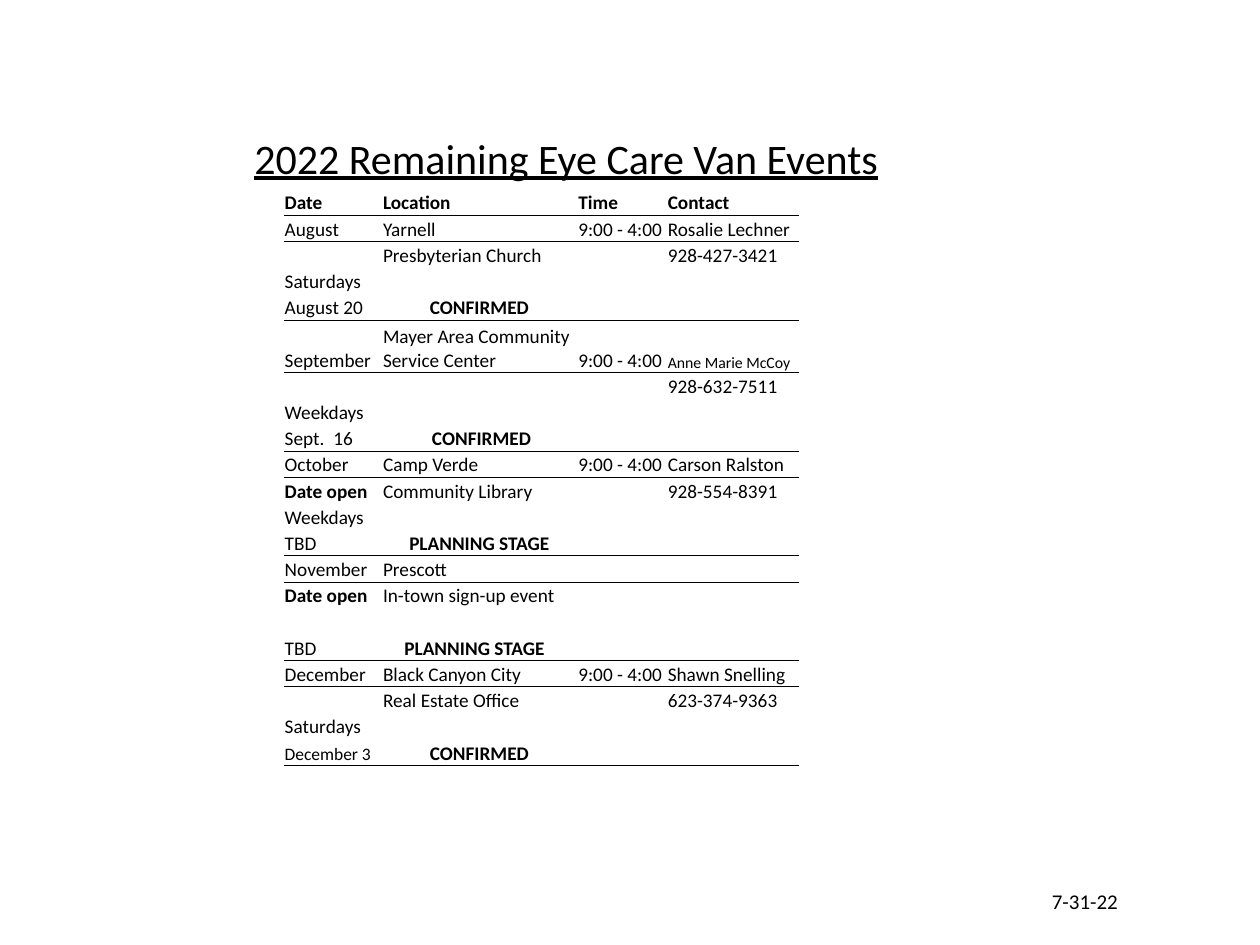
import pptx
import pptx.util
import pptx.dml.color
import pptx.enum.text
import pptx.oxml.ns
import lxml.etree

Inches = pptx.util.Inches
Pt = pptx.util.Pt
qn = pptx.oxml.ns.qn
COLORS = {"ink": "000000"}
FONT = "Calibri"


def add_run(p, text, size, bold=False, underline=False):
    r = p.add_run()
    r.text = text
    r.font.name = FONT
    r.font.size = Pt(size)
    r.font.bold = bold
    r.font.underline = underline
    r.font.color.rgb = pptx.dml.color.RGBColor.from_string(COLORS["ink"])


def add_border(cell, side):
    ln = lxml.etree.SubElement(cell._tc.get_or_add_tcPr(), qn("a:" + side), w=str(Pt(0.5)))
    fill = lxml.etree.SubElement(ln, qn("a:solidFill"))
    lxml.etree.SubElement(fill, qn("a:srgbClr"), val=COLORS["ink"])


prs = pptx.Presentation()
prs.slide_width = Inches(10)
prs.slide_height = Inches(7.5)
s = prs.slides.add_slide(prs.slide_layouts[6])

hours = "9:00 - 4:00"
rows = [
    ("Date", "Location", "Time", "Contact"),
    ("August", "Yarnell", hours, "Rosalie Lechner"),
    ("", "Presbyterian Church", "", "928-427-3421"),
    ("Saturdays", "", "", ""),
    ("August 20", "CONFIRMED", "", ""),
    ("September", "Mayer Area Community Service Center", hours, "Anne Marie McCoy"),
    ("", "", "", "928-632-7511"),
    ("Weekdays", "", "", ""),
    ("Sept.  16", " CONFIRMED", "", ""),
    ("October", "Camp Verde", hours, "Carson Ralston"),
    ("Date open", "Community Library", "", "928-554-8391"),
    ("Weekdays", "", "", ""),
    ("TBD", "PLANNING STAGE", "", ""),
    ("November", "Prescott", "", ""),
    ("Date open", "In-town sign-up event", "", ""),
    ("", "", "", ""),
    ("TBD", "PLANNING STAGE", "", ""),
    ("December", "Black Canyon City", hours, "Shawn Snelling"),
    ("", "Real Estate Office", "", "623-374-9363"),
    ("Saturdays", "", "", ""),
    ("December 3", "CONFIRMED", "", ""),
]
widths = [0.78, 1.55, 0.71, 1.05]
small_sizes = {"Anne Marie McCoy": 9, "December 3": 10}
tall_row = 5
indented_row = 16
group_size = 4
row_height = Inches(4.58) // (len(rows) + 1)

frame = s.shapes.add_table(len(rows), len(widths), Inches(2.25), Inches(1.5), Inches(4.1), Inches(4.58))
table = frame.table
table.first_row = False
table.horz_banding = False
style = table._tbl.tblPr.find(qn("a:tableStyleId"))
style.text = "{2D5ABB26-0587-4C30-8999-92F81FD0307C}"
for column, width in zip(table.columns, widths):
    column.width = Inches(width)

for i, values in enumerate(rows):
    table.rows[i].height = row_height * (2 if i == tall_row else 1)
    for j, text in enumerate(values):
        cell = table.cell(i, j)
        cell.margin_left = cell.margin_right = cell.margin_top = Inches(0.01)
        cell.margin_bottom = 0
        cell.vertical_anchor = pptx.enum.text.MSO_ANCHOR.BOTTOM
        if i % group_size == 1:
            add_border(cell, "lnT")
        if i % group_size == 0:
            add_border(cell, "lnB")
        cell.fill.background()
        p = cell.text_frame.paragraphs[0]
        if not text:
            lxml.etree.SubElement(p._p, qn("a:endParaRPr"), sz="1100")
            continue
        status = j == 1 and i > 0 and i % group_size == 0
        add_run(p, text, small_sizes.get(text, 11), bold=i == 0 or status or text == "Date open")
        if status and i == indented_row:
            cell.margin_left = Inches(0.18)
        elif status:
            p.alignment = pptx.enum.text.PP_ALIGN.CENTER

captions = [
    ("2022 Remaining Eye Care Van Events", 24, True, (1.92, 1, 5.42, 0.5)),
    ("7-31-22", 12, False, (8.25, 7, 0.83, 0.3)),
]
for text, size, underline, box in captions:
    sp = s.shapes.add_textbox(*[Inches(v) for v in box])
    tf = sp.text_frame
    tf.word_wrap = True
    tf.auto_size = pptx.enum.text.MSO_AUTO_SIZE.SHAPE_TO_FIT_TEXT
    add_run(tf.paragraphs[0], text, size, underline=underline)

prs.save("out.pptx")
